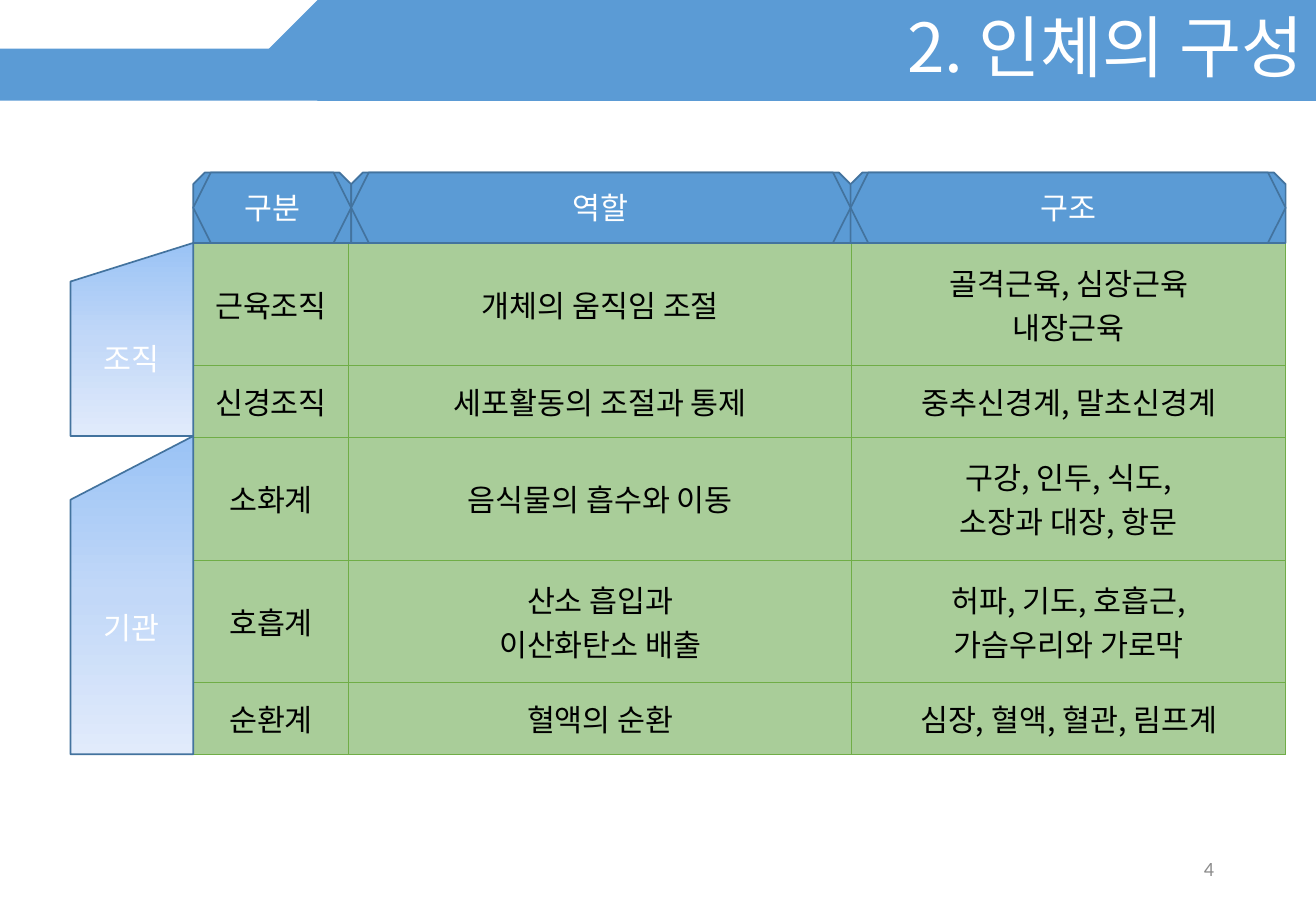
from copy import deepcopy

from lxml import etree
from pptx import Presentation
from pptx.dml.color import RGBColor
from pptx.enum.shapes import MSO_SHAPE
from pptx.enum.text import MSO_ANCHOR, PP_ALIGN
from pptx.oxml.ns import qn
from pptx.util import Pt

EMU_PER_PX = 9144
MIDDLE = MSO_ANCHOR.MIDDLE
CENTER = PP_ALIGN.CENTER
RIGHT = PP_ALIGN.RIGHT
RECTANGLE = MSO_SHAPE.RECTANGLE
PENTAGON = MSO_SHAPE.PENTAGON
SNIPPED = MSO_SHAPE.SNIP_2_SAME_RECTANGLE
HEXAGON = MSO_SHAPE.HEXAGON
MANUAL_INPUT = MSO_SHAPE.FLOWCHART_MANUAL_INPUT

COLORS = {
    "band": "5B9BD5",
    "outline": "43739E",
    "cell": "A9CD99",
    "border": "70AD47",
    "white": "FFFFFF",
    "black": "000000",
    "number": "8C8C8C",
    "group_top": "9AC3F5",
    "group_middle": "C2D8F8",
    "group_bottom": "E1EBFB",
}
GROUP_STOPS = [(0, "group_top"), (0.5, "group_middle"), (1, "group_bottom")]

KOREAN = "Noto Sans CJK KR"
FORMATS = {
    "title": {
        "color": "white",
        "font": {"name": KOREAN, "size": Pt(40)},
        "paragraph": {"alignment": RIGHT, "line_spacing": 0.9},
    },
    "label": {
        "color": "white",
        "font": {"name": KOREAN, "size": Pt(18)},
        "paragraph": {"alignment": CENTER},
    },
    "cell": {
        "color": "black",
        "font": {"name": KOREAN, "size": Pt(18), "bold": False},
        "paragraph": {"alignment": CENTER},
    },
    "number": {
        "color": "number",
        "font": {"name": "Calibri", "size": Pt(12)},
        "paragraph": {"alignment": RIGHT},
    },
}

TABLE_LEFT, TABLE_TOP = 159, 200
COLUMN_WIDTHS = [128, 414, 357]
ROW_HEIGHTS = [101, 59, 101, 101, 59]
ROWS = [
    ["근육조직", "개체의 움직임 조절", "골격근육, 심장근육\n내장근육"],
    ["신경조직", "세포활동의 조절과 통제", "중추신경계, 말초신경계"],
    ["소화계", "음식물의 흡수와 이동", "구강, 인두, 식도,\n소장과 대장, 항문"],
    ["호흡계", "산소 흡입과\n이산화탄소 배출", "허파, 기도, 호흡근,\n가슴우리와 가로막"],
    ["순환계", "혈액의 순환", "심장, 혈액, 혈관, 림프계"],
]
HEADER_TOP, HEADER_HEIGHT = 142, 58
HEADERS = [("구분", 159, 130), ("역할", 289, 411), ("구조", 700, 358)]
GROUP_LEFT, GROUP_WIDTH = 58, 101
GROUPS = [("조직", 200, 159), ("기관", 359, 262)]


def px(*lengths):
    return [length * EMU_PER_PX for length in lengths]


def rgb(color):
    return RGBColor.from_string(COLORS[color])


def set_attributes(target, values):
    for name, value in values.items():
        setattr(target, name, value)


def write_text(frame, text, kind):
    style = FORMATS[kind]
    frame.text = text
    frame.word_wrap = True
    for paragraph in frame.paragraphs:
        set_attributes(paragraph, style["paragraph"])
        for run in paragraph.runs:
            set_attributes(run.font, style["font"])
            run.font.color.rgb = rgb(style["color"])
            east_asian = etree.SubElement(run.font._element, qn("a:ea"))
            east_asian.set("typeface", style["font"]["name"])


def add_text(slide, box, text, kind):
    frame = slide.shapes.add_textbox(*px(*box)).text_frame
    frame.vertical_anchor = MIDDLE
    write_text(frame, text, kind)


def add_block(slide, preset, box, outlined=True, label=None):
    block = slide.shapes.add_shape(preset, *px(*box))
    block.shadow.inherit = False
    block.fill.solid()
    block.fill.fore_color.rgb = rgb("band")
    if outlined:
        block.line.color.rgb = rgb("outline")
        block.line.width = Pt(1)
    else:
        block.line.fill.background()
    if label:
        block.text_frame.vertical_anchor = MIDDLE
        write_text(block.text_frame, label, "label")
    return block


def fill_gradient(block):
    block.fill.gradient()
    block.fill.gradient_angle = 270
    stop_list = block._element.spPr.find(".//" + qn("a:gsLst"))
    stop_list.insert(1, deepcopy(stop_list[0]))
    for stop, (position, color) in zip(block.fill.gradient_stops, GROUP_STOPS):
        stop.position = position
        stop.color.rgb = rgb(color)


def add_borders(cell):
    properties = cell._tc.get_or_add_tcPr()
    for index, side in enumerate(["a:lnL", "a:lnR", "a:lnT", "a:lnB"]):
        border = etree.Element(qn(side), w=str(Pt(0.5)))
        solid = etree.SubElement(border, qn("a:solidFill"))
        etree.SubElement(solid, qn("a:srgbClr"), val=COLORS["border"])
        properties.insert(index, border)


def add_body_table(slide):
    box = px(TABLE_LEFT, TABLE_TOP, sum(COLUMN_WIDTHS), sum(ROW_HEIGHTS))
    table = slide.shapes.add_table(len(ROWS), len(COLUMN_WIDTHS), *box).table
    set_attributes(table, {"first_row": False, "horz_banding": False})
    for column, width in zip(table.columns, px(*COLUMN_WIDTHS)):
        column.width = width
    for row, height, texts in zip(table.rows, px(*ROW_HEIGHTS), ROWS):
        row.height = height
        for cell, text in zip(row.cells, texts):
            write_text(cell.text_frame, text, "cell")
            cell.vertical_anchor = MIDDLE
            cell.fill.solid()
            cell.fill.fore_color.rgb = rgb("cell")
            add_borders(cell)


def main():
    presentation = Presentation()
    presentation.slide_width, presentation.slide_height = px(1083, 750)
    slide = presentation.slides.add_slide(presentation.slide_layouts[6])

    add_block(slide, RECTANGLE, (0, 40, 1083, 43), outlined=False)
    title_band = add_block(slide, PENTAGON, (220, 0, 863, 83), outlined=False)
    title_band._element.spPr.find(qn("a:xfrm")).set("flipH", "1")
    add_text(slide, (149, 0, 934, 83), "2. 인체의 구성", "title")

    add_body_table(slide)
    add_text(slide, (765, 695, 244, 40), "4", "number")

    for label, left, width in HEADERS:
        box = (left, HEADER_TOP, width, HEADER_HEIGHT)
        add_block(slide, SNIPPED, box)
        add_block(slide, HEXAGON, box, label=label)
    for label, top, height in GROUPS:
        box = (GROUP_LEFT, top, GROUP_WIDTH, height)
        fill_gradient(add_block(slide, MANUAL_INPUT, box, label=label))

    presentation.save("out.pptx")


if __name__ == "__main__":
    main()
